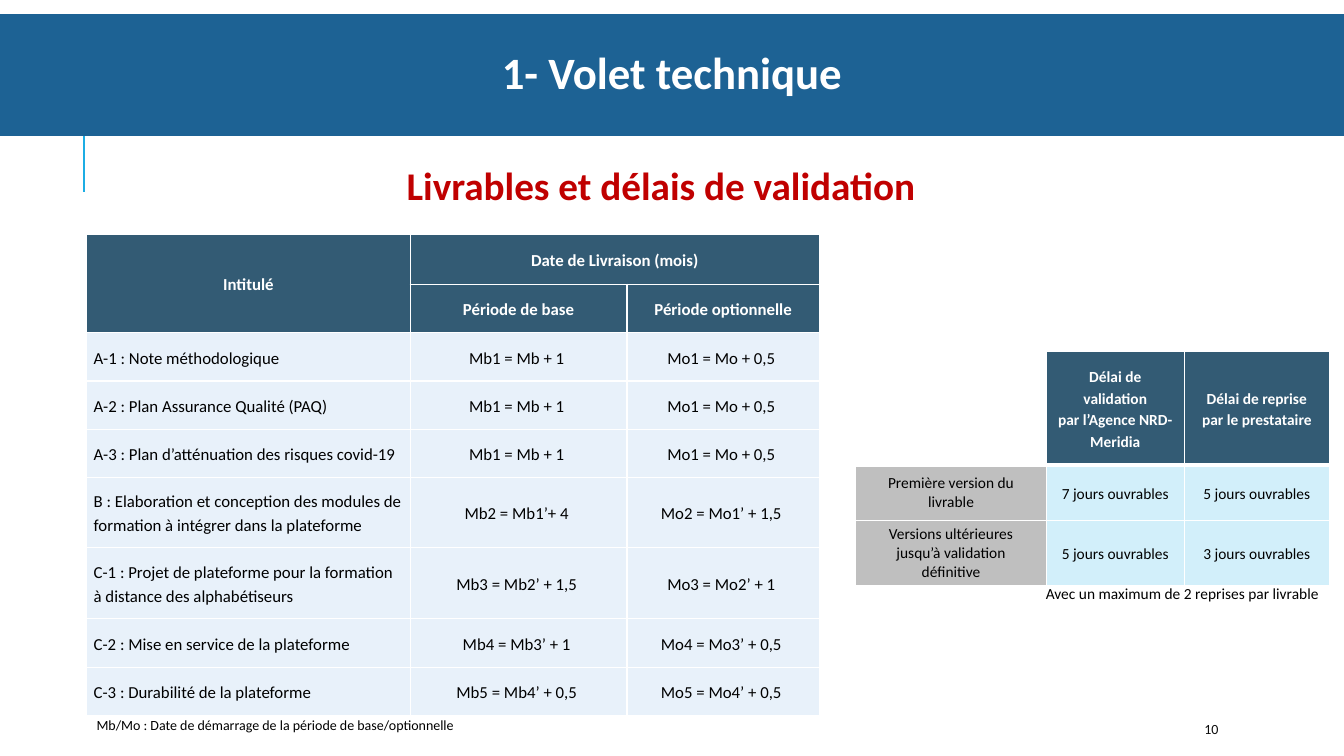
from lxml.etree import SubElement
from pptx import Presentation
from pptx.dml.color import RGBColor
from pptx.enum.shapes import MSO_CONNECTOR, MSO_SHAPE
from pptx.enum.text import MSO_ANCHOR, PP_ALIGN
from pptx.oxml import parse_xml
from pptx.oxml.ns import nsdecls, qn
from pptx.util import Pt

COLOURS = {
    "banner": "1D6294",
    "accent": "1CADE4",
    "heading": "C00000",
    "header": "335B74",
    "deliverable": "E8F1FA",
    "version": "BFBFBF",
    "delay": "D2EFFA",
    "white": "FFFFFF",
    "black": "000000",
    "number": "0D0D0D",
}
FONT = "Calibri"
LEFT, CENTER = PP_ALIGN.LEFT, PP_ALIGN.CENTER
NARROW = (5.04, 0, 5.04, 0)
NORMAL = (7.2, 3.6, 7.2, 3.6)

DELIVERABLES = [
    ("A-1 : Note méthodologique", "Mb1 = Mb + 1 ", "Mo1 = Mo + 0,5 "),
    ("A-2 : Plan Assurance Qualité (PAQ)", "Mb1 = Mb + 1 ", "Mo1 = Mo + 0,5 "),
    ("A-3 : Plan d’atténuation des risques covid-19", "Mb1 = Mb + 1 ", "Mo1 = Mo + 0,5 "),
    ("B : Elaboration et conception des modules de formation à intégrer dans la plateforme",
     "Mb2 = Mb1’+ 4 ", "Mo2 = Mo1’ + 1,5 "),
    ("C-1 : Projet de plateforme pour la formation à distance des alphabétiseurs",
     "Mb3 = Mb2’ + 1,5 ", "Mo3 = Mo2’ + 1 "),
    ("C-2 : Mise en service de la plateforme", "Mb4 = Mb3’ + 1 ", "Mo4 = Mo3’ + 0,5 "),
    ("C-3 : Durabilité de la plateforme", "Mb5 = Mb4’ + 0,5 ", "Mo5 = Mo4’ + 0,5 "),
]
DELAYS = [
    ("Première version du livrable", "7 jours ouvrables", "5 jours ouvrables"),
    ("Versions ultérieures jusqu’à validation définitive", "5 jours ouvrables", "3 jours ouvrables"),
]


def colour(name):
    return RGBColor.from_string(COLOURS[name])


def write(frame, lines, size, ink, bold=False, align=LEFT, spacing=1.0):
    for index, line in enumerate(lines):
        para = frame.add_paragraph() if index else frame.paragraphs[0]
        para.alignment = align
        para.line_spacing = spacing
        span = para.add_run()
        span.text = line
        span.font.name = FONT
        span.font.size = Pt(size)
        span.font.bold = bold
        span.font.color.rgb = colour(ink)


def add_label(page, text, left, top, width, height, size, ink, align=LEFT):
    box = page.shapes.add_textbox(Pt(left), Pt(top), Pt(width), Pt(height))
    box.text_frame.word_wrap = False
    box.text_frame.vertical_anchor = MSO_ANCHOR.MIDDLE
    write(box.text_frame, [text], size, ink, align=align)


def add_title_shape(page, kind, text, left, top, width, height, size, ink, fill=None, spacing=1.0):
    shape = page.shapes.add_shape(kind, Pt(left), Pt(top), Pt(width), Pt(height))
    shape.shadow.inherit = False
    shape.line.fill.background()
    if fill:
        shape.fill.solid()
        shape.fill.fore_color.rgb = colour(fill)
    else:
        shape.fill.background()
    shape.text_frame.word_wrap = True
    shape.text_frame.vertical_anchor = MSO_ANCHOR.MIDDLE
    write(shape.text_frame, [text], size, ink, True, CENTER, spacing)
    return shape


def add_text_shadow(shape):
    properties = shape.text_frame.paragraphs[0].runs[0].font.fill._xPr
    properties.find(qn("a:solidFill")).addnext(parse_xml(
        f'<a:effectLst {nsdecls("a")}><a:outerShdw blurRad="38100" dist="38100" dir="2700000">'
        '<a:srgbClr val="000000"><a:alpha val="43000"/></a:srgbClr></a:outerShdw></a:effectLst>'))


def add_accent_line(page, x, top, bottom):
    line = page.shapes.add_connector(MSO_CONNECTOR.STRAIGHT, Pt(x), Pt(bottom), Pt(x), Pt(top))
    line.line.color.rgb = colour("accent")
    line.line.width = Pt(1.5)
    SubElement(line._element.spPr, qn("a:effectLst"))


def add_grid(page, left, top, widths, heights):
    frame = page.shapes.add_table(len(heights), len(widths), Pt(left), Pt(top),
                                  Pt(sum(widths)), Pt(sum(heights)))
    table = frame.table
    table.first_row = table.horz_banding = False
    for column, width in zip(table.columns, widths):
        column.width = Pt(width)
    for row, height in zip(table.rows, heights):
        row.height = Pt(height)
    return table


def style_cell(cell, fill, lines=(), size=12, ink="black", bold=False, align=CENTER,
               spacing=1.15, insets=NARROW, anchor=MSO_ANCHOR.MIDDLE, bottom=1):
    cell.fill.solid()
    cell.fill.fore_color.rgb = colour(fill)
    cell.vertical_anchor = anchor
    cell.margin_left, cell.margin_top, cell.margin_right, cell.margin_bottom = map(Pt, insets)
    write(cell.text_frame, lines, size, ink, bold, align, spacing)
    for index, side in enumerate("LRTB"):
        width = Pt(bottom if side == "B" else 1)
        cell._tc.tcPr.insert(index, parse_xml(
            f'<a:ln{side} {nsdecls("a")} w="{width}"><a:solidFill>'
            f'<a:srgbClr val="{COLOURS["white"]}"/></a:solidFill></a:ln{side}>'))


def add_deliverables(page):
    heights = [35.28] + [34.56] * 4 + [49.68, 51.12] + [34.56] * 2
    table = add_grid(page, 61.92, 167.76, [231.12, 154.8, 137.52], heights)
    headers = [("Intitulé", "Date de Livraison (mois)", ""),
               ("", "Période de base", "Période optionnelle")]
    for row, texts in enumerate(headers):
        for column, text in enumerate(texts):
            style_cell(table.cell(row, column), "header", [text] if text else [],
                       ink="white", bold=True)
    table.cell(0, 0).merge(table.cell(1, 0))
    table.cell(0, 1).merge(table.cell(0, 2))
    for row, texts in enumerate(DELIVERABLES, len(headers)):
        for column, text in enumerate(texts):
            style_cell(table.cell(row, column), "deliverable", [text],
                       align=CENTER if column else LEFT)


def add_delays(page):
    table = add_grid(page, 611.28, 251.28, [136.08, 98.64, 103.68], [80.64, 39.6, 41.04])
    headers = [[], ["Délai de validation", "par l’Agence NRD-Meridia"],
               ["Délai de reprise", "par le prestataire"]]
    for column, lines in enumerate(headers):
        style_cell(table.cell(0, column), "header" if lines else "white", lines, 11,
                   "white", True, insets=NORMAL, bottom=3)
    anchors = [MSO_ANCHOR.MIDDLE, MSO_ANCHOR.TOP]
    for row, (version, *delays) in enumerate(DELAYS, 1):
        style_cell(table.cell(row, 0), "version", [version], 11, spacing=1.0,
                   insets=NORMAL, anchor=anchors[row - 1])
        for column, delay in enumerate(delays, 1):
            style_cell(table.cell(row, column), "delay", [delay], 11)


def main():
    deck = Presentation()
    deck.slide_width, deck.slide_height = Pt(960), Pt(540)
    page = deck.slides.add_slide(deck.slide_layouts[6])
    add_accent_line(page, 60, 64.8, 136.8)
    add_label(page, "10", 853.2, 509.76, 76.32, 21.6, 10, "number")
    heading = add_title_shape(page, MSO_SHAPE.CHEVRON, "Livrables et délais de validation ",
                              151.92, 112.32, 646.56, 39.6, 28, "heading")
    add_text_shadow(heading)
    add_title_shape(page, MSO_SHAPE.RECTANGLE, "1- Volet technique",
                    0, 10, 960, 87, 32, "white", "banner", 0.9)
    add_label(page, "Mb/Mo : Date de démarrage de la période de base/optionnelle",
              61.92, 508.32, 273.6, 19.44, 10, "black")
    add_delays(page)
    add_label(page, "Avec un maximum de 2 reprises par livrable",
              739.44, 413.28, 210.24, 20.88, 11, "black", CENTER)
    add_deliverables(page)
    deck.save("out.pptx")


if __name__ == "__main__":
    main()
